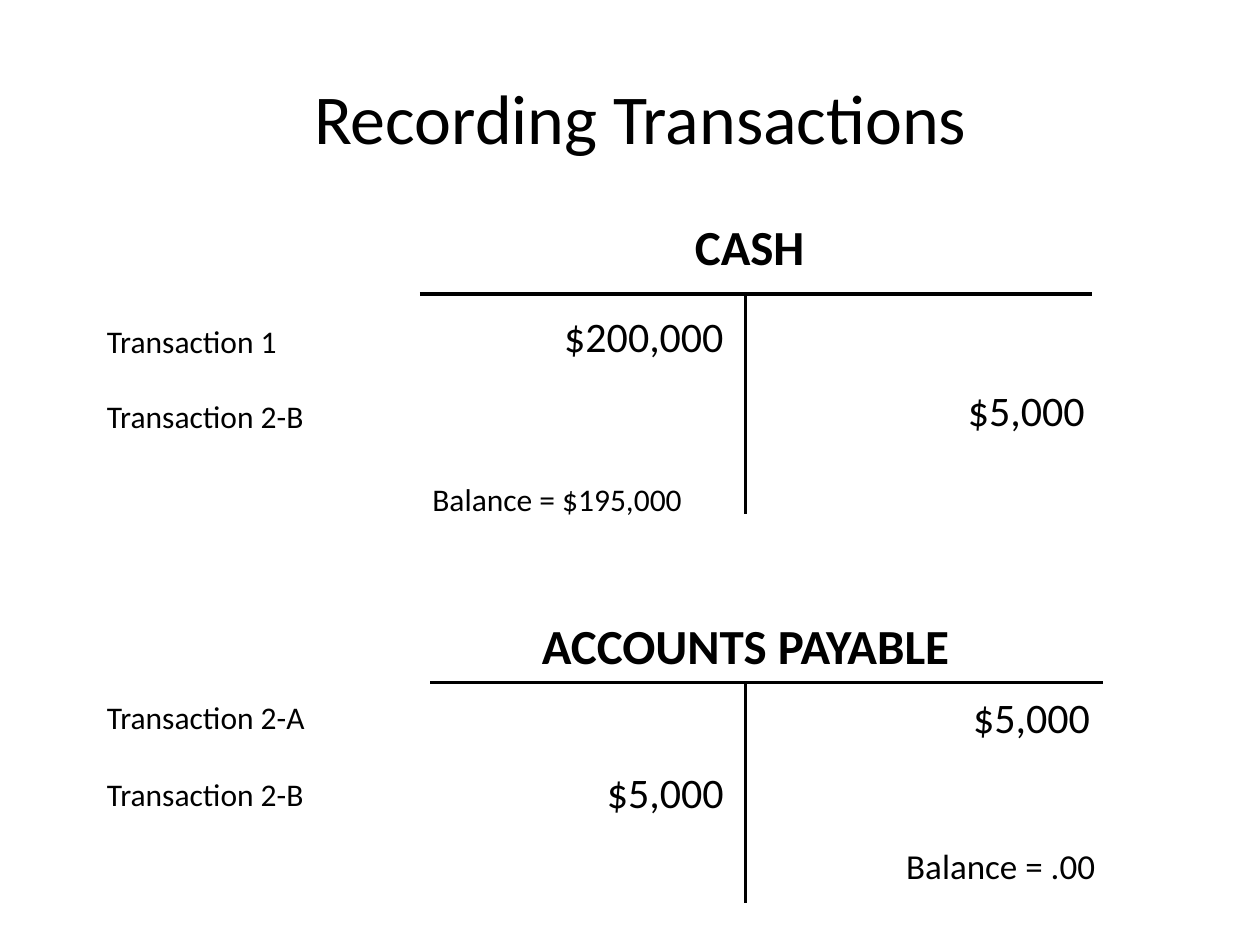
"""Build a slide showing two T-accounts with their recorded transactions."""
import pptx
import pptx.dml.color
import pptx.enum.shapes
import pptx.enum.text
import pptx.oxml.xmlchemy
import pptx.util
from lxml import etree

COLORS = {"ink": "000000", "paper": "FFFFFF"}
INK = pptx.dml.color.RGBColor.from_string(COLORS["ink"])
ALIGN = pptx.enum.text.PP_ALIGN
ANCHOR = pptx.enum.text.MSO_ANCHOR
DRAWING = "http://schemas.openxmlformats.org/drawingml/2006/main"

presentation = pptx.Presentation()
presentation.slide_width = pptx.util.Inches(10)
presentation.slide_height = pptx.util.Inches(7.5)
COLUMN = presentation.slide_width / 120
ROW = presentation.slide_height / 90

FORMATS = {
    "title": {"size": 40, "bold": False, "align": ALIGN.CENTER},
    "account": {"size": 28, "bold": True, "align": ALIGN.CENTER},
    "short account": {"size": 28, "bold": True, "align": ALIGN.LEFT},
    "amount": {"size": 24, "bold": False, "align": ALIGN.RIGHT},
    "label": {"size": 18, "bold": False, "align": ALIGN.LEFT},
    "balance": {"size": 20, "bold": False, "align": ALIGN.RIGHT},
}


def place_text(shape, text, style, left, top, width, height):
    """Position a shape on the grid and fill it with formatted text."""
    box = {"left": left * COLUMN, "top": top * ROW, "width": width * COLUMN, "height": height * ROW}
    for name, value in box.items():
        setattr(shape, name, round(value))
    shape.text_frame.word_wrap = True
    paragraph = shape.text_frame.paragraphs[0]
    paragraph.text = text
    paragraph.alignment = FORMATS[style]["align"]
    font = paragraph.runs[0].font
    font.color.rgb = INK
    values = {"name": "Calibri", "size": pptx.util.Pt(FORMATS[style]["size"]), "bold": FORMATS[style]["bold"]}
    for name, value in values.items():
        setattr(font, name, value)


slide = presentation.slides.add_slide(presentation.slide_layouts[5])
slide.background.fill.solid()
slide.background.fill.fore_color.rgb = pptx.dml.color.RGBColor.from_string(COLORS["paper"])
place_text(slide.shapes.title, "Recording Transactions", "title", 7, 3.6, 108, 15)
slide.shapes.title.text_frame.vertical_anchor = ANCHOR.MIDDLE

STEM, BAR_WIDTH, STEM_HEIGHT = 71, 64, 21
for bar_left, bar_top in [(40, 28), (41, 65)]:
    for start_x, start_y, end_x, end_y in [
        (bar_left, bar_top, bar_left + BAR_WIDTH, bar_top),
        (STEM, bar_top, STEM, bar_top + STEM_HEIGHT),
    ]:
        connector = slide.shapes.add_connector(
            pptx.enum.shapes.MSO_CONNECTOR.STRAIGHT,
            round(start_x * COLUMN), round(start_y * ROW),
            round(end_x * COLUMN), round(end_y * ROW),
        )
        connector.line.color.rgb = INK
        connector.line.width = pptx.util.Pt(2)
        etree.SubElement(connector._element.spPr, f"{{{DRAWING}}}effectLst")

ENTRIES = [
    ("CASH", "short account", 65, 20, 14, 6.8),
    ("Transaction 1", "label", 9, 30.1, 31, 4.8),
    ("$200,000", "amount", 42.6, 29, 27.5, 6),
    ("Transaction 2-B", "label", 9, 37.2, 31, 4.8),
    ("$5,000", "amount", 77, 36, 27.5, 6),
    ("Balance = $195,000", "label", 40, 45.1, 31, 4.8),
    ("ACCOUNTS PAYABLE", "account", 49, 58, 44, 6.8),
    ("Transaction 2-A", "label", 9, 65.9, 22.5, 4.8),
    ("$5,000", "amount", 77.5, 65.3, 27.5, 6),
    ("Transaction 2-B", "label", 9, 73.2, 22.5, 4.8),
    ("$5,000", "amount", 42.6, 72.4, 27.5, 6),
    ("Balance = .00", "balance", 75, 79.8, 30.5, 5.3),
]
for entry in ENTRIES:
    place_text(slide.shapes.add_textbox(0, 0, 0, 0), *entry)

presentation.save("out.pptx")
